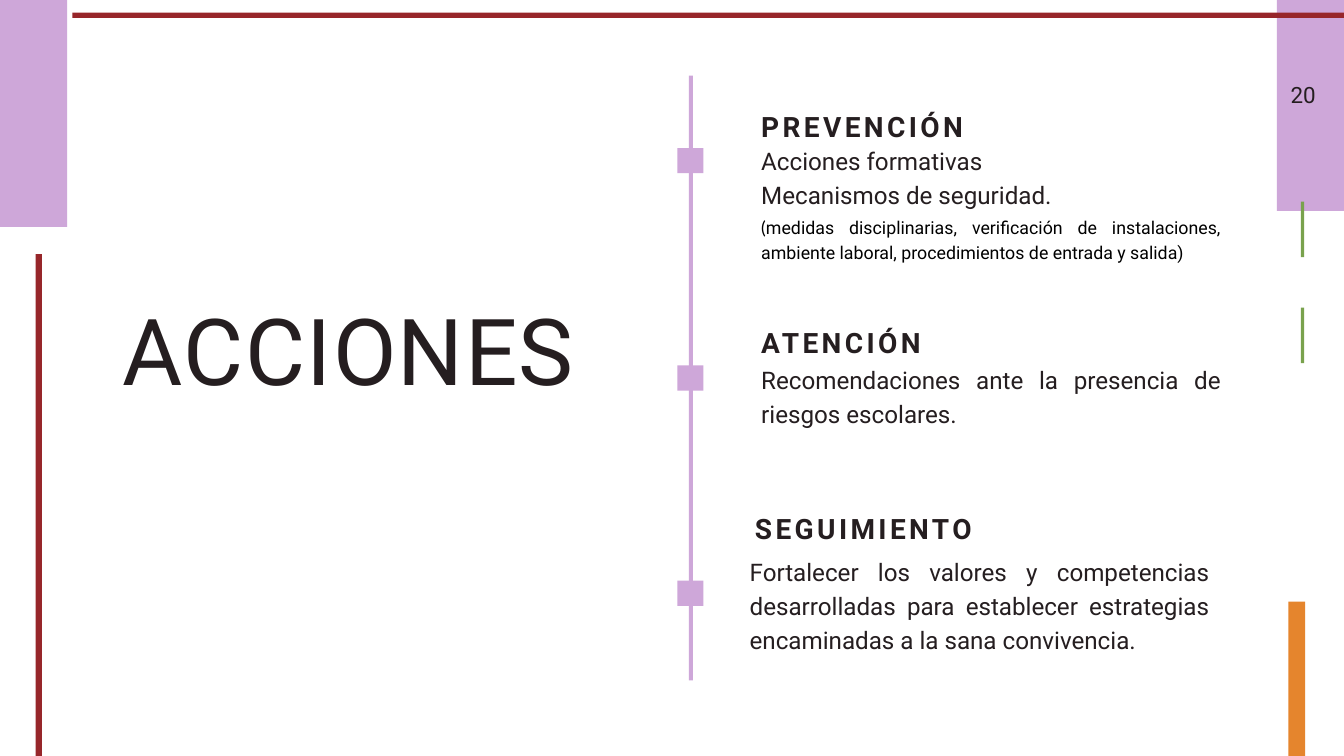
from pptx import Presentation
from pptx.dml.color import RGBColor
from pptx.enum.shapes import MSO_SHAPE
from pptx.enum.text import MSO_ANCHOR, MSO_AUTO_SIZE, PP_ALIGN as Align
from pptx.util import Emu, Pt

PX = 9525
SLIDE_W, SLIDE_H = 1280, 720

LILAC = RGBColor(0xCE, 0xA7, 0xD9)
MAROON = RGBColor(0x97, 0x26, 0x2A)
GREEN = RGBColor(0x79, 0xA2, 0x4D)
ORANGE = RGBColor(0xE5, 0x85, 0x2D)
INK = RGBColor(0x25, 0x1E, 0x20)
BLACK = RGBColor(0, 0, 0)

COLUMN_X, COLUMN_W = 725, 438
TITLE_ONLY = 5

# left, top, width, height, colour
FRAME = [
    (0, 0, 64, 216, LILAC),
    (34, 242, 6, 478, MAROON),
    (1216, 0, 64, 201, LILAC),
    (69, 12, 1211, 5, MAROON),
    (1239, 192, 3, 53, GREEN),
    (1239, 293, 3, 53, GREEN),
    (1227, 573, 16, 147, ORANGE),
]
MARKER_TOPS = [141, 348, 553]

# heading, its left and top, then left, top, height and paragraphs of the body
STAGES = [
    ("PREVENCIÓN", COLUMN_X, 99, COLUMN_X, 135, 64,
     [("Acciones formativas", Align.LEFT),
      ("Mecanismos de seguridad.", Align.JUSTIFY)]),
    ("ATENCIÓN", COLUMN_X, 305, COLUMN_X, 343, 64,
     [("Recomendaciones ante la presencia de riesgos escolares.",
       Align.JUSTIFY)]),
    ("SEGUIMIENTO", 719, 482, 714, 526, 95,
     [("Fortalecer los valores y competencias desarrolladas para establecer "
       "estrategias encaminadas a la sana convivencia.", Align.JUSTIFY)]),
]
SAFETY_NOTE = ("medidas disciplinarias, verificación de instalaciones, ambiente "
               "laboral, procedimientos de entrada y salida)")


def px(*lengths):
    return [Emu(length * PX) for length in lengths]


def add_bar(slide, left, top, width, height, colour):
    bar = slide.shapes.add_shape(MSO_SHAPE.RECTANGLE,
                                 *px(left, top, width, height))
    bar.shadow.inherit = False
    bar.fill.solid()
    bar.fill.fore_color.rgb = colour
    bar.line.fill.background()


def prepare_frame(shape):
    """Give the shape a wrapping, top-anchored text frame without margins."""
    frame = shape.text_frame
    frame.word_wrap = True
    frame.auto_size = MSO_AUTO_SIZE.NONE
    frame.vertical_anchor = MSO_ANCHOR.TOP
    frame.margin_left = frame.margin_top = 0
    frame.margin_right = frame.margin_bottom = 0
    return frame


def add_text_frame(slide, left, top, width, height):
    return prepare_frame(slide.shapes.add_textbox(*px(left, top, width, height)))


def format_paragraph(paragraph, align, leading):
    paragraph.alignment = align
    paragraph.line_spacing = Pt(leading)
    paragraph.space_before = paragraph.space_after = Pt(0)


def add_run(paragraph, text, size, colour=INK, bold=False, tracking=0,
            face="Roboto"):
    """Append a run; tracking is the letter spacing in points."""
    run = paragraph.add_run()
    run.text = text
    font = run.font
    font.name, font.size, font.bold = face, Pt(size), bold
    font.color.rgb = colour
    if tracking:
        run._r.get_or_add_rPr().set("spc", str(round(tracking * 100)))


def set_title(slide):
    title = slide.shapes.title
    title.left, title.top, title.width, title.height = px(64, 314, 536, 74)
    paragraph = prepare_frame(title).paragraphs[0]
    format_paragraph(paragraph, Align.CENTER, 52.8)
    add_run(paragraph, "ACCIONES", 66, tracking=1)


def add_timeline(slide):
    add_bar(slide, 656, 72, 4, 576, LILAC)
    for top in MARKER_TOPS:
        add_bar(slide, 645, top, 25, 24, LILAC)


def add_heading(slide, text, left, top):
    paragraph = add_text_frame(slide, left, top, COLUMN_W, 35).paragraphs[0]
    format_paragraph(paragraph, Align.LEFT, 28)
    add_run(paragraph, text, 20, bold=True, tracking=2.4)


def add_body(slide, left, top, height, lines):
    frame = add_text_frame(slide, left, top, COLUMN_W, height)
    for index, (text, align) in enumerate(lines):
        paragraph = frame.add_paragraph() if index else frame.paragraphs[0]
        format_paragraph(paragraph, align, 24.3)
        add_run(paragraph, text, 17.3)


def add_safety_note(slide):
    paragraph = add_text_frame(slide, COLUMN_X, 203, COLUMN_W, 46).paragraphs[0]
    format_paragraph(paragraph, Align.JUSTIFY, 17.7)
    add_run(paragraph, "(", 12.7, BLACK, face="Lato")
    add_run(paragraph, SAFETY_NOTE, 12.7, BLACK)


def add_page_number(slide):
    paragraph = add_text_frame(slide, 1217, 73, 36, 28).paragraphs[0]
    format_paragraph(paragraph, Align.RIGHT, 22.4)
    add_run(paragraph, "20", 16)


def main():
    deck = Presentation()
    deck.slide_width, deck.slide_height = px(SLIDE_W, SLIDE_H)
    slide = deck.slides.add_slide(deck.slide_layouts[TITLE_ONLY])

    for bar in FRAME:
        add_bar(slide, *bar)
    add_timeline(slide)
    set_title(slide)
    add_page_number(slide)
    for heading, head_x, head_y, body_x, body_y, body_h, lines in STAGES:
        add_heading(slide, heading, head_x, head_y)
        add_body(slide, body_x, body_y, body_h, lines)
    add_safety_note(slide)

    deck.save("out.pptx")


if __name__ == "__main__":
    main()
